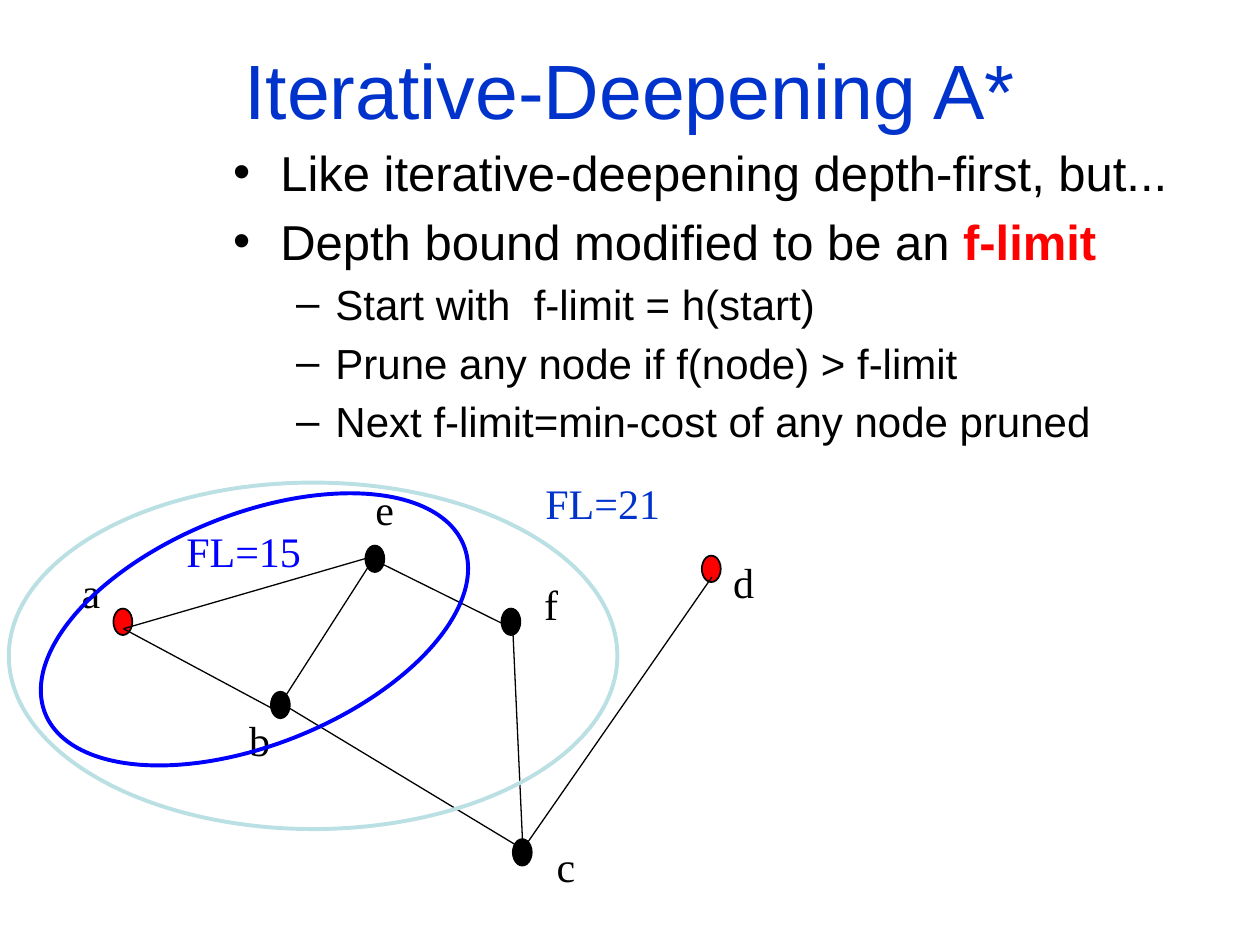
from pptx import Presentation
from pptx.dml.color import RGBColor
from pptx.enum.shapes import MSO_CONNECTOR, MSO_SHAPE
from pptx.enum.text import MSO_ANCHOR, MSO_AUTO_SIZE, PP_ALIGN
from pptx.util import Pt
from lxml import etree

OVAL = MSO_SHAPE.OVAL
STRAIGHT = MSO_CONNECTOR.STRAIGHT
CENTER = PP_ALIGN.CENTER
MIDDLE = MSO_ANCHOR.MIDDLE
NO_FIT = MSO_AUTO_SIZE.NONE
FIT_SHAPE = MSO_AUTO_SIZE.SHAPE_TO_FIT_TEXT

PX = 9144
PAGE_SIZE = (1000, 750)
NODE_SIZE = (15, 21)
LABEL_HEIGHT = 50
DRAWING_NS = "http://schemas.openxmlformats.org/drawingml/2006/main"


class Theme:
    ink = "000000"
    title = "0033CC"
    accent = "FF0000"
    inner = "0000FF"
    outer = "BBE0E3"
    sans = "Arial"
    serif = "Times New Roman"
    title_size = 44
    body_sizes = (28, 24)
    label_size = 24
    edge_width = 0.75
    node_width = 1
    contour_width = 2.25


TITLE = "Iterative-Deepening A*"
TITLE_AREA = (50, 30, 900, 81)
BODY_AREA = (175, 108, 765, 308)
BULLETS = [
    (0, [("Like iterative-deepening depth-first, but...", False)]),
    (0, [("Depth bound modified to be an ", False), ("f-limit", True)]),
    (1, [("Start with  f-limit = h(start)", False)]),
    (1, [("Prune any node if f(node) > f-limit", False)]),
    (1, [("Next f-limit=min-cost of any node pruned", False)]),
]
NODES = [
    (90, 483, Theme.accent),
    (215, 549, Theme.ink),
    (407, 666, Theme.ink),
    (398, 483, Theme.ink),
    (557, 441, Theme.accent),
    (290, 433, Theme.ink),
]
EDGES = [
    ((98, 499), (298, 441)),
    ((290, 441), (407, 499)),
    ((98, 499), (223, 566)),
    ((223, 558), (298, 441)),
    ((223, 558), (415, 674)),
    ((415, 674), (565, 458)),
    ((407, 499), (415, 674)),
]
NODE_LABELS = [
    ("a", 55, 445, 35),
    ("b", 188, 562, 37),
    ("c", 432, 662, 35),
    ("d", 572, 437, 37),
    ("e", 288, 379, 35),
    ("f", 422, 454, 31),
]
CONTOURS = [
    ((23, 408, 358, 183), -21.9, Theme.inner, ("FL=15", 138, 412, 111), Theme.inner),
    ((7, 383, 483, 275), 0, Theme.outer, ("FL=21", 423, 374, 111), Theme.title),
]


def emu(*lengths):
    return [length * PX for length in lengths]


def set_all(target, values):
    for name, value in values.items():
        setattr(target, name, value)


def place(box, area):
    set_all(box, dict(zip(("left", "top", "width", "height"), emu(*area))))


def add_span(para, text, font, size, color, bold=False):
    span = para.add_run()
    span.text = text
    set_all(span.font, {"name": font, "size": Pt(size), "bold": bold})
    span.font.color.rgb = RGBColor.from_string(color)


def set_line(shape, color, width):
    shape.line.color.rgb = RGBColor.from_string(color)
    shape.line.width = Pt(width)


def add_oval(page, area, fill, line, width, rotation=0):
    oval = page.shapes.add_shape(OVAL, *emu(*area))
    oval.shadow.inherit = False
    oval.rotation = rotation
    if fill:
        oval.fill.solid()
        oval.fill.fore_color.rgb = RGBColor.from_string(fill)
    else:
        oval.fill.background()
    set_line(oval, line, width)


def add_edge(page, start, end):
    edge = page.shapes.add_connector(STRAIGHT, *emu(*start, *end))
    set_line(edge, Theme.ink, Theme.edge_width)
    properties = edge.line._get_or_add_ln().getparent()
    etree.SubElement(properties, f"{{{DRAWING_NS}}}effectLst")


def add_label(page, text, left, top, width, color):
    box = page.shapes.add_textbox(*emu(left, top, width, LABEL_HEIGHT))
    set_all(box.text_frame, {"word_wrap": False, "auto_size": FIT_SHAPE})
    add_span(box.text_frame.paragraphs[0], text, Theme.serif, Theme.label_size, color)


def fill_title(page):
    box = page.shapes.title
    place(box, TITLE_AREA)
    set_all(box.text_frame, {"vertical_anchor": MIDDLE, "auto_size": NO_FIT})
    para = box.text_frame.paragraphs[0]
    para.alignment = CENTER
    add_span(para, TITLE, Theme.sans, Theme.title_size, Theme.title)


def fill_body(page):
    box = page.placeholders[1]
    place(box, BODY_AREA)
    frame = box.text_frame
    frame.auto_size = NO_FIT
    for index, (level, spans) in enumerate(BULLETS):
        para = frame.add_paragraph() if index else frame.paragraphs[0]
        para.level = level
        for text, strong in spans:
            color = Theme.accent if strong else Theme.ink
            add_span(para, text, Theme.sans, Theme.body_sizes[level], color, strong)


def main():
    deck = Presentation()
    deck.slide_width, deck.slide_height = emu(*PAGE_SIZE)
    page = deck.slides.add_slide(deck.slide_layouts[1])
    fill_title(page)
    fill_body(page)
    for left, top, fill in NODES:
        add_oval(page, (left, top, *NODE_SIZE), fill, Theme.ink, Theme.node_width)
    for start, end in EDGES:
        add_edge(page, start, end)
    for label in NODE_LABELS:
        add_label(page, *label, Theme.ink)
    for area, rotation, line, label, color in CONTOURS:
        add_oval(page, area, None, line, Theme.contour_width, rotation)
        add_label(page, *label, color)
    deck.save("out.pptx")


if __name__ == "__main__":
    main()
